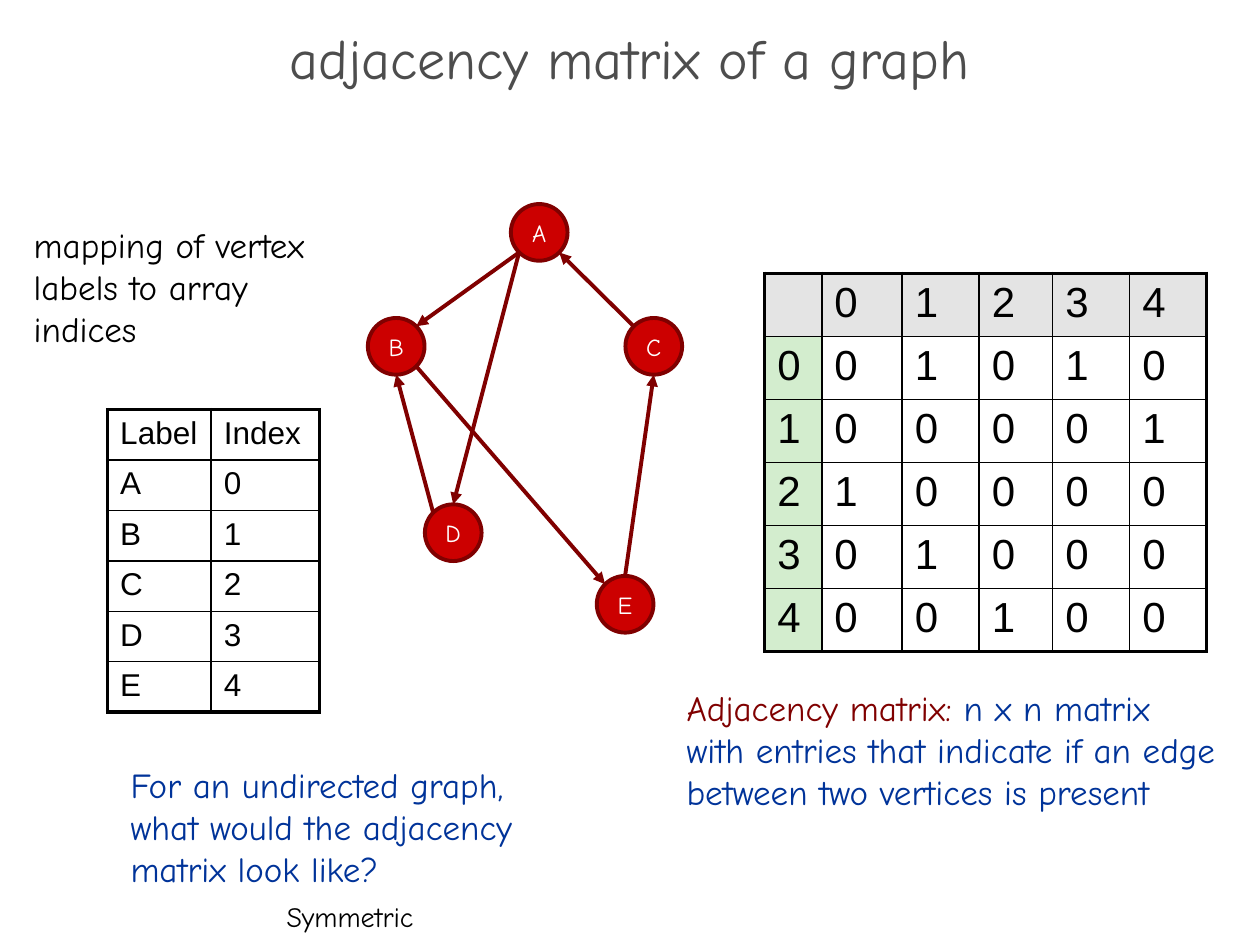
from dataclasses import dataclass
from math import sqrt

from lxml import etree
from pptx import Presentation
from pptx.dml.color import RGBColor
from pptx.enum.shapes import MSO_CONNECTOR, MSO_SHAPE
from pptx.enum.text import MSO_ANCHOR, PP_ALIGN
from pptx.oxml.ns import qn
from pptx.util import Pt

LINE = MSO_CONNECTOR.STRAIGHT
OVAL = MSO_SHAPE.OVAL
LEFT, MID = PP_ALIGN.LEFT, PP_ALIGN.CENTER
TOP, CORE = MSO_ANCHOR.TOP, MSO_ANCHOR.MIDDLE


@dataclass(frozen=True)
class Theme:
    """Hold the colours, fonts and sizes of the slide."""
    ink: str = "000000"
    paper: str = "FFFFFF"
    grey: str = "4D4D4D"
    red: str = "CC0000"
    maroon: str = "800000"
    blue: str = "003399"
    head: str = "E4E4E4"
    side: str = "D3EDCE"
    hand: str = "Comic Neue"
    plain: str = "Arial"
    title: float = 32
    body: float = 20
    note: float = 16
    node: float = 14
    label: float = 18
    digit: float = 24
    thick: float = 2.25
    thin: float = 1


THEME = Theme()
RADIUS = 16.2
DIAG = 1 / sqrt(2)
PORTS = {
    "n": (0, -1), "s": (0, 1), "ne": (DIAG, -DIAG),
    "nw": (-DIAG, -DIAG), "sw": (-DIAG, DIAG), "se": (DIAG, DIAG),
}
NODES = {
    "A": (308.1, 132.8), "B": (226.4, 197.9), "C": (373.6, 197.9),
    "D": (259, 304.4), "E": (357.2, 345.3),
}
EDGES = [
    ("C", "nw", "A", "se"), ("A", "sw", "D", "n"), ("A", "sw", "B", "ne"),
    ("D", "nw", "B", "s"), ("E", "n", "C", "s"), ("B", "se", "E", "nw"),
]


def tint(code):
    """Turn a hex code into a colour."""
    return RGBColor.from_string(code)


def write(frame, paras, size=THEME.body, font=THEME.hand, color=THEME.ink,
          align=LEFT, anchor=TOP, wrap=True, space=None):
    """Fill a frame with paragraphs, each a string or a list of (text, colour)."""
    frame.word_wrap = wrap
    frame.vertical_anchor = anchor
    for i, para in enumerate(paras):
        line = frame.paragraphs[0] if i == 0 else frame.add_paragraph()
        line.alignment = align
        line.line_spacing = space
        parts = [(para, color)] if isinstance(para, str) else para
        for text, hue in parts:
            run = line.add_run()
            run.text = text
            run.font.size = Pt(size)
            run.font.name = font
            run.font.color.rgb = tint(hue)


def add_text(slide, box, paras, **style):
    """Add a text box."""
    shape = slide.shapes.add_textbox(*map(Pt, box))
    write(shape.text_frame, paras, **style)


def add_node(slide, name):
    """Add a graph vertex."""
    x, y = NODES[name]
    box = (x - RADIUS, y - RADIUS, 2 * RADIUS, 2 * RADIUS)
    shape = slide.shapes.add_shape(OVAL, *map(Pt, box))
    shape.shadow.inherit = False
    shape.fill.solid()
    shape.fill.fore_color.rgb = tint(THEME.red)
    shape.line.color.rgb = tint(THEME.maroon)
    shape.line.width = Pt(THEME.thick)
    write(shape.text_frame, [name], size=THEME.node, color=THEME.paper,
          align=MID, anchor=CORE, wrap=False)


def port(name, side):
    """Find the point on a vertex's rim that faces a side."""
    return [Pt(c + RADIUS * d) for c, d in zip(NODES[name], PORTS[side])]


def add_edge(slide, start, leave, end, enter):
    """Add an arrow from one vertex to another."""
    edge = slide.shapes.add_connector(LINE, *port(start, leave), *port(end, enter))
    edge.line.color.rgb = tint(THEME.maroon)
    edge.line.width = Pt(THEME.thick)
    props = edge._element.spPr
    etree.SubElement(props.find(qn("a:ln")), qn("a:tailEnd"), type="triangle")
    etree.SubElement(props, qn("a:effectLst"))


def add_rule(cell, side, width):
    """Draw one border of a cell."""
    props = cell._tc.get_or_add_tcPr()
    rule = etree.SubElement(props, qn("a:ln" + side), w=str(Pt(width)))
    fill = etree.SubElement(rule, qn("a:solidFill"))
    etree.SubElement(fill, qn("a:srgbClr"), val=THEME.ink)


def add_grid(slide, spot, widths, high, rows, size, shade):
    """Add a table with a thick frame, thin inner rules and shaded cells."""
    last, end = len(rows) - 1, len(widths) - 1
    box = (*spot, sum(widths), high * len(rows))
    grid = slide.shapes.add_table(len(rows), len(widths), *map(Pt, box)).table
    grid.first_row = grid.horz_banding = False
    for col, wide in zip(grid.columns, widths):
        col.width = Pt(wide)
    for r, row in enumerate(rows):
        grid.rows[r].height = Pt(high)
        for c, value in enumerate(row):
            cell = grid.cell(r, c)
            rims = {"L": c == 0, "R": c == end, "T": r == 0, "B": r == last}
            for side, outer in rims.items():
                add_rule(cell, side, THEME.thick if outer else THEME.thin)
            cell.fill.solid()
            cell.fill.fore_color.rgb = tint(shade(r, c))
            if value:
                write(cell.text_frame, [value], size=size, font=THEME.plain)


def shade(row, col):
    """Choose the fill of a matrix cell."""
    if row == 0:
        return THEME.head
    return THEME.side if col == 0 else THEME.paper


def add_index(slide):
    """Add the table that maps labels to indices."""
    rows = [("Label", "Index")] + [(n, str(i)) for i, n in enumerate(NODES)]
    add_grid(slide, (61.5, 234), (59.2, 62), 28.8, rows, THEME.label,
             lambda row, col: THEME.paper)


def add_matrix(slide):
    """Add the adjacency matrix worked out from the edges."""
    links = {(start, end) for start, _, end, _ in EDGES}
    rows = [[""] + [str(i) for i in range(len(NODES))]]
    for i, start in enumerate(NODES):
        rows.append([str(i)] + [str(int((start, end) in links)) for end in NODES])
    add_grid(slide, (437, 156.2), (32.6, 46, 44, 42, 44, 44), 36, rows,
             THEME.digit, shade)


def main():
    """Build the slide and save it."""
    deck = Presentation()
    deck.slide_width, deck.slide_height = Pt(720), Pt(540)
    slide = deck.slides.add_slide(deck.slide_layouts[6])
    add_text(slide, (0, 19.4, 720, 36), ["adjacency matrix of a graph"],
             size=THEME.title, color=THEME.grey, align=MID, anchor=CORE, space=0.7)
    for name in NODES:
        add_node(slide, name)
    for edge in EDGES:
        add_edge(slide, *edge)
    add_text(slide, (12.2, 124.1, 186.5, 80),
             ["mapping of vertex", "labels to array indices"])
    add_index(slide)
    add_matrix(slide)
    add_text(slide, (385.2, 388.5, 317.5, 104.4), [[
        ("Adjacency matrix: ", THEME.maroon),
        ("n x n matrix with entries that indicate if an edge "
         "between two vertices is present", THEME.blue)]])
    add_text(slide, (67.5, 432.7, 278, 80),
             ["For an undirected graph,", "what would the adjacency",
              "matrix look like?"], color=THEME.blue)
    add_text(slide, (156.7, 510.5, 96.5, 26.6), ["Symmetric"],
             size=THEME.note, wrap=False)
    deck.save("out.pptx")


if __name__ == "__main__":
    main()
